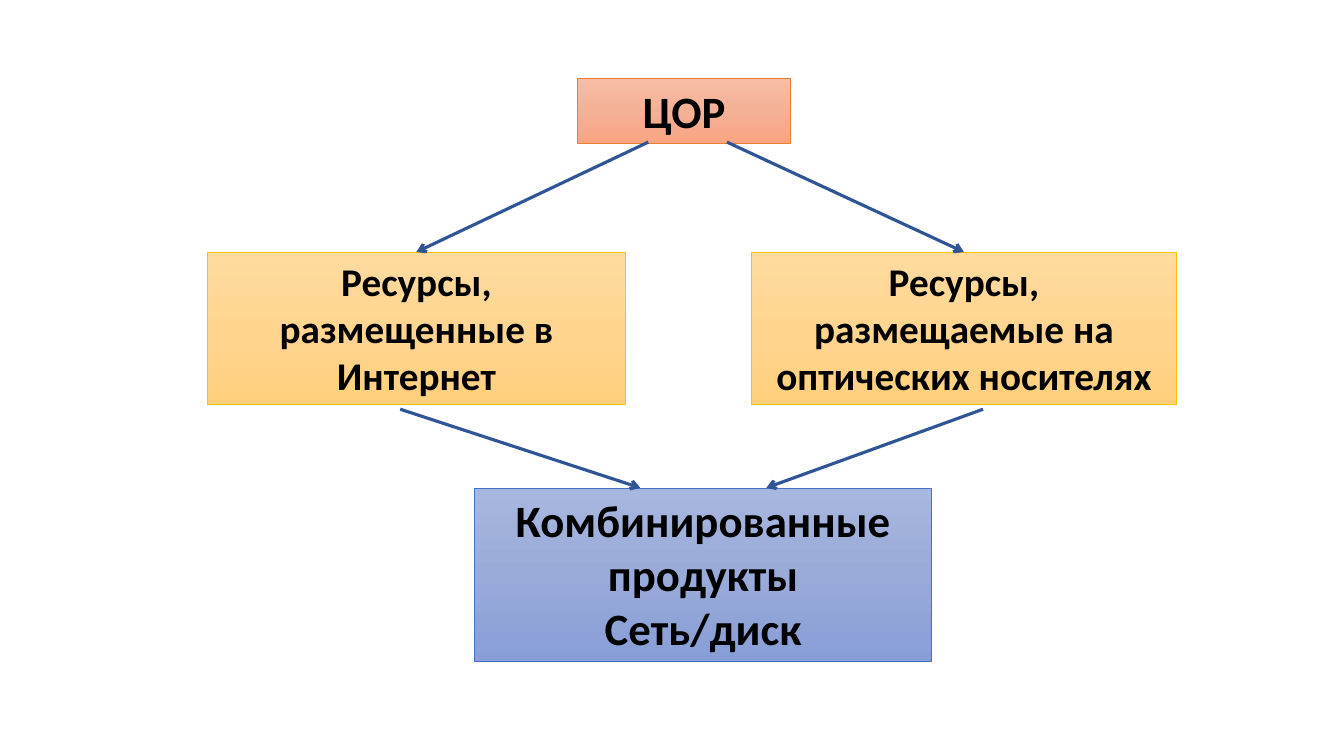
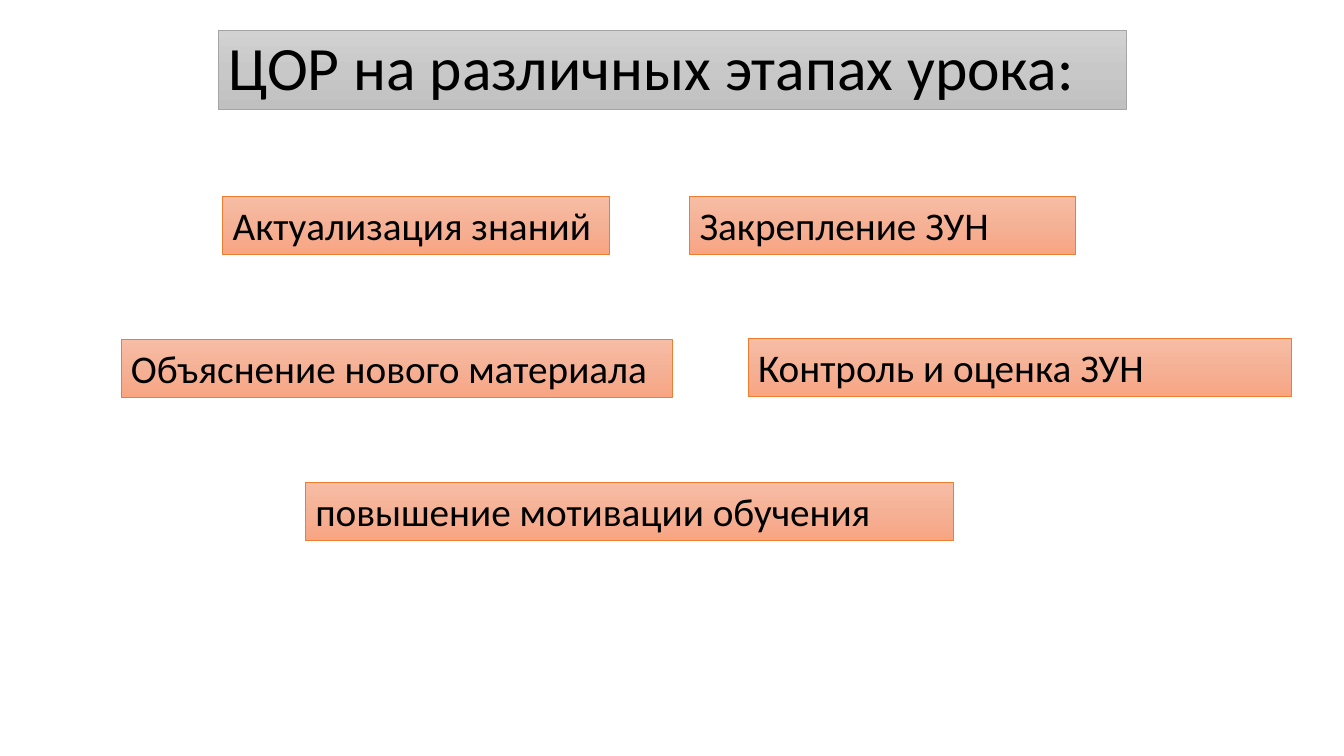
from copy import deepcopy
from dataclasses import dataclass, field
from typing import NamedTuple

from lxml.etree import SubElement
from pptx import Presentation
from pptx.dml.color import RGBColor
from pptx.enum.shapes import MSO_CONNECTOR, MSO_SHAPE
from pptx.enum.text import MSO_ANCHOR, MSO_AUTO_SIZE, PP_ALIGN
from pptx.oxml.ns import qn
from pptx.shapes.autoshape import Shape
from pptx.slide import Slide
from pptx.util import Inches, Pt


class Palette(NamedTuple):
    top: str
    middle: str
    bottom: str
    border: str


@dataclass(frozen=True)
class Theme:
    font: str = "Calibri"
    text: str = "000000"
    arrow: str = "2F5597"
    orange: Palette = Palette("F7BDA5", "F5B196", "F8A582", "ED7D31")
    gold: Palette = Palette("FFDB9E", "FFD590", "FFD07C", "FFC000")
    blue: Palette = Palette("A8B7DF", "9AABD9", "889ED7", "4472C4")
    gray: Palette = Palette("D2D2D2", "C8C8C8", "C0C0C0", "A5A5A5")
    title_size: int = 44
    heading_size: int = 32
    body_size: int = 28
    border_width: float = 0.5
    arrow_width: float = 2.25


THEME = Theme()


@dataclass(frozen=True)
class Box:
    text: str
    left: float
    top: float
    width: float
    height: float = 0.57
    palette: Palette = field(default=THEME.orange)
    size: int = THEME.body_size


class Arrow(NamedTuple):
    start_x: float
    start_y: float
    end_x: float
    end_y: float


SOURCE_BOXES = [
    Box("ЦОР", 5.73, 0.78, 2.11, 0.64, THEME.orange, THEME.heading_size),
    Box("Ресурсы, размещаемые на оптических носителях", 7.45, 2.5, 4.22, 1.51, THEME.gold),
    Box("Ресурсы, размещенные в Интернет", 2.06, 2.5, 4.14, 1.51, THEME.gold),
    Box("Комбинированные продукты\nСеть/диск", 4.71, 4.84, 4.53, 1.72, THEME.blue, THEME.heading_size),
]
SOURCE_ARROWS = [
    Arrow(6.43, 1.41, 4.13, 2.5),
    Arrow(7.21, 1.41, 9.56, 2.5),
    Arrow(3.97, 4.06, 6.35, 4.84),
    Arrow(9.75, 4.06, 7.6, 4.84),
]
STAGE_TITLE = Box("ЦОР на различных этапах урока:", 2.17, 0.3, 9, 0.79, THEME.gray, THEME.title_size)
STAGE_BOXES = [
    Box("Актуализация знаний", 2.21, 1.95, 3.83),
    Box("Объяснение нового материала", 1.2, 3.37, 5.47),
    Box("Закрепление ЗУН", 6.84, 1.95, 3.83),
    Box("Контроль и оценка ЗУН", 7.42, 3.36, 5.39),
    Box("повышение мотивации обучения", 3.03, 4.79, 6.43),
]


def fill_gradient(shape: Shape, palette: Palette) -> None:
    shape.fill.gradient()
    shape.fill.gradient_angle = 270
    first_stop = next(shape.element.iter(qn("a:gs")))
    first_stop.addnext(deepcopy(first_stop))
    colors = (palette.top, palette.middle, palette.bottom)
    for index, (stop, color) in enumerate(zip(shape.fill.gradient_stops, colors)):
        stop.position = index / 2
        stop.color.rgb = RGBColor.from_string(color)


def add_box(slide: Slide, box: Box, alignment: PP_ALIGN = PP_ALIGN.LEFT, bold: bool = False) -> Shape:
    shape = slide.shapes.add_shape(
        MSO_SHAPE.RECTANGLE, Inches(box.left), Inches(box.top), Inches(box.width), Inches(box.height)
    )
    shape.shadow.inherit = False
    fill_gradient(shape, box.palette)
    shape.line.color.rgb = RGBColor.from_string(box.palette.border)
    shape.line.width = Pt(THEME.border_width)
    frame = shape.text_frame
    frame.text = box.text
    frame.word_wrap = True
    frame.auto_size = MSO_AUTO_SIZE.SHAPE_TO_FIT_TEXT
    frame.vertical_anchor = MSO_ANCHOR.TOP
    for paragraph in frame.paragraphs:
        paragraph.alignment = alignment
        paragraph.font.name = THEME.font
        paragraph.font.size = Pt(box.size)
        paragraph.font.bold = bold
        paragraph.font.color.rgb = RGBColor.from_string(THEME.text)
    return shape


def add_title(slide: Slide, box: Box) -> None:
    frame = add_box(slide, box).text_frame
    frame.auto_size = MSO_AUTO_SIZE.NONE
    frame.vertical_anchor = MSO_ANCHOR.MIDDLE
    frame.paragraphs[0].line_spacing = 0.9


def add_arrow(slide: Slide, arrow: Arrow) -> None:
    connector = slide.shapes.add_connector(MSO_CONNECTOR.STRAIGHT, *map(Inches, arrow))
    connector.line.color.rgb = RGBColor.from_string(THEME.arrow)
    connector.line.width = Pt(THEME.arrow_width)
    SubElement(connector.get_or_add_ln(), qn("a:tailEnd"), type="arrow")
    SubElement(connector.element.spPr, qn("a:effectLst"))


def build_sources(slide: Slide) -> None:
    for box in SOURCE_BOXES:
        add_box(slide, box, PP_ALIGN.CENTER, bold=True)
    for arrow in SOURCE_ARROWS:
        add_arrow(slide, arrow)


def build_stages(slide: Slide) -> None:
    add_title(slide, STAGE_TITLE)
    for box in STAGE_BOXES:
        add_box(slide, box)


def main() -> None:
    presentation = Presentation()
    presentation.slide_width = Inches(13.33)
    presentation.slide_height = Inches(7.5)
    blank_layout = presentation.slide_layouts[6]
    for build in (build_sources, build_stages):
        build(presentation.slides.add_slide(blank_layout))
    presentation.save("out.pptx")


if __name__ == "__main__":
    main()
